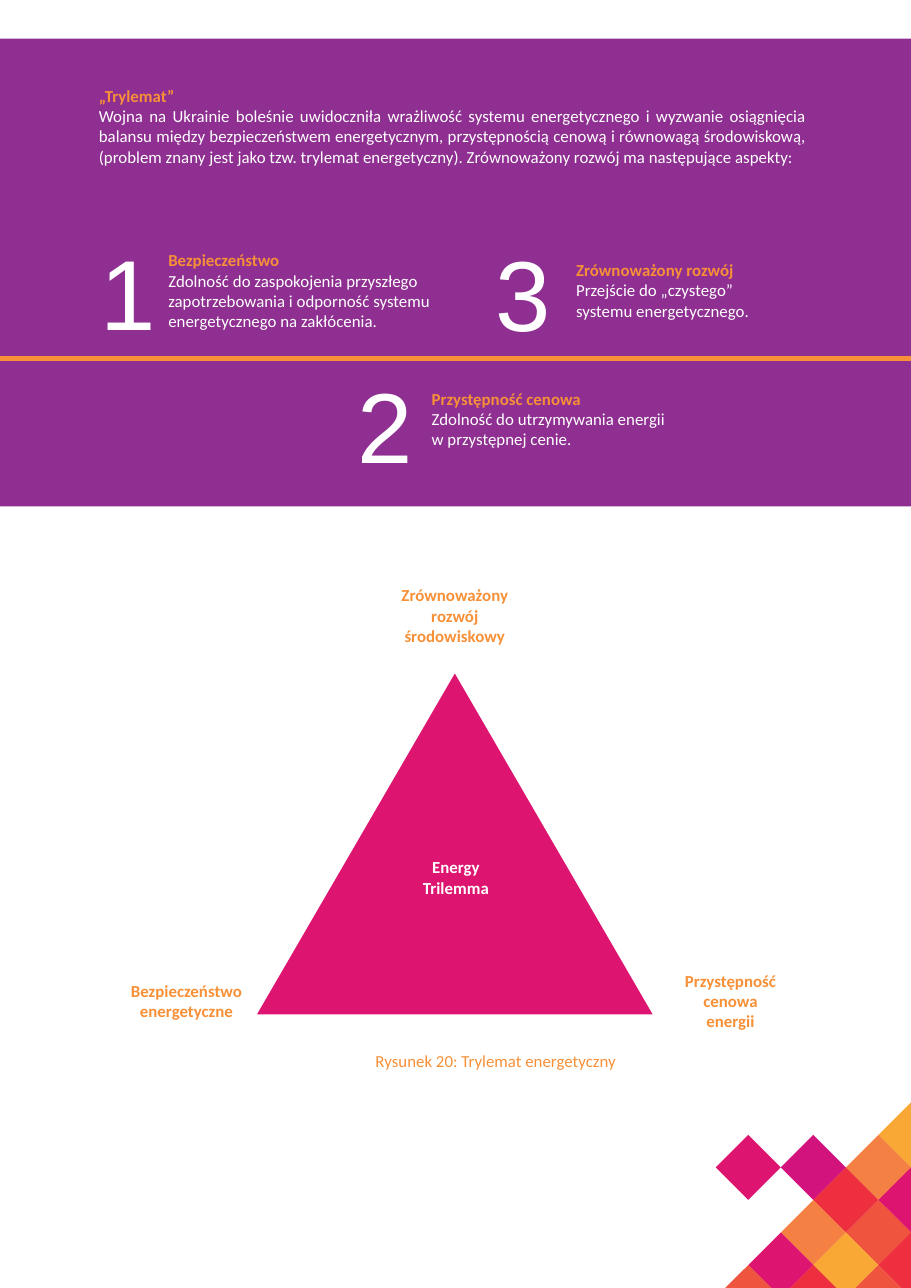
from dataclasses import dataclass

from lxml import etree
from pptx import Presentation
from pptx.dml.color import RGBColor
from pptx.enum.shapes import MSO_CONNECTOR, MSO_SHAPE
from pptx.enum.text import MSO_ANCHOR, PP_ALIGN
from pptx.oxml.ns import qn
from pptx.util import Cm, Pt

LEFT, CENTER, JUSTIFY = PP_ALIGN.LEFT, PP_ALIGN.CENTER, PP_ALIGN.JUSTIFY
TOP, MIDDLE = MSO_ANCHOR.TOP, MSO_ANCHOR.MIDDLE

WHITE = RGBColor(0xFF, 0xFF, 0xFF)
PURPLE = RGBColor(0x8E, 0x2F, 0x91)
ORANGE = RGBColor(0xF7, 0x90, 0x37)
PINK = RGBColor(0xDD, 0x14, 0x70)
MAGENTA = RGBColor(0xD3, 0x13, 0x7D)
RED = RGBColor(0xED, 0x2F, 0x40)
CORAL = RGBColor(0xEF, 0x54, 0x3F)
APRICOT = RGBColor(0xF4, 0x80, 0x43)
AMBER = RGBColor(0xF9, 0xA8, 0x35)

PAGE_WIDTH, PAGE_HEIGHT = 21.0, 29.7
DIVIDER_TOP = 8.26
TILE_HALF = 0.75
MOSAIC_TOP = 26.17

Point = tuple[float, float]


@dataclass(frozen=True)
class Box:
    """A frame in centimetres."""
    left: float
    top: float
    width: float
    height: float

    def lengths(self) -> tuple[Cm, Cm, Cm, Cm]:
        return Cm(self.left), Cm(self.top), Cm(self.width), Cm(self.height)


@dataclass(frozen=True)
class Line:
    text: str
    color: RGBColor = ORANGE
    bold: bool = False
    size: float = 11
    font: str = "Calibri"


@dataclass(frozen=True)
class Aspect:
    number: str
    number_left: float
    number_top: float
    heading: str
    description: str
    box: Box


@dataclass(frozen=True)
class Label:
    text: str
    box: Box
    color: RGBColor = ORANGE


@dataclass(frozen=True)
class Tile:
    """A mosaic diamond, counted in half diagonals from the right edge and down."""
    column: int
    row: int
    color: RGBColor


INTRO = (
    "Wojna na Ukrainie boleśnie uwidoczniła wrażliwość systemu energetycznego i wyzwanie "
    "osiągnięcia balansu między bezpieczeństwem energetycznym, przystępnością cenową i "
    "równowagą środowiskową, (problem znany jest jako tzw. trylemat energetyczny). "
    "Zrównoważony rozwój ma następujące aspekty:"
)
ASPECTS = [
    Aspect("1", 2.06, 5.21, "Bezpieczeństwo",
           "Zdolność do zaspokojenia przyszłego zapotrzebowania i odporność systemu "
           "energetycznego na zakłócenia.", Box(3.63, 5.64, 8.69, 1.75)),
    Aspect("2", 8, DIVIDER_TOP, "Przystępność cenowa",
           "Zdolność do utrzymywania energii w przystępnej cenie.",
           Box(9.7, 8.84, 6.02, 1.75)),
    Aspect("3", 11.18, 5.23, "Zrównoważony rozwój",
           "Przejście do „czystego” systemu energetycznego.",
           Box(13.03, 5.87, 4.78, 1.75)),
]
LABELS = [
    Label("Zrównoważony rozwój środowiskowy", Box(8.86, 13.16, 3.25, 2.06)),
    Label("Energy Trilemma", Box(9.09, 19.2, 2.84, 2.06), WHITE),
    Label("Bezpieczeństwo energetyczne", Box(2.74, 22.05, 3.12, 2.06)),
    Label("Przystępność cenowa energii", Box(15.42, 22.05, 2.84, 2.06)),
]
TILES = [
    Tile(0, 0, AMBER),
    Tile(1, 1, APRICOT), Tile(3, 1, MAGENTA), Tile(5, 1, PINK),
    Tile(0, 2, PINK), Tile(2, 2, RED),
    Tile(1, 3, CORAL), Tile(3, 3, APRICOT),
    Tile(0, 4, RED), Tile(2, 4, AMBER), Tile(4, 4, PINK),
    Tile(1, 5, CORAL), Tile(3, 5, RED), Tile(5, 5, CORAL),
]


def add_text(slide, box: Box, lines: list[Line], align: PP_ALIGN = LEFT,
             anchor: MSO_ANCHOR = TOP) -> None:
    frame = slide.shapes.add_textbox(*box.lengths()).text_frame
    frame.word_wrap = True
    frame.vertical_anchor = anchor
    for index, line in enumerate(lines):
        paragraph = frame.add_paragraph() if index else frame.paragraphs[0]
        paragraph.text = line.text
        paragraph.alignment = align
        paragraph.font.name = line.font
        paragraph.font.size = Pt(line.size)
        paragraph.font.bold = line.bold
        paragraph.font.color.rgb = line.color


def paint(shape, color: RGBColor) -> None:
    """Give a flat fill without outline or shadow."""
    shape.shadow.inherit = False
    shape.fill.solid()
    shape.fill.fore_color.rgb = color
    shape.line.fill.background()


def add_divider(slide) -> None:
    divider = slide.shapes.add_connector(
        MSO_CONNECTOR.STRAIGHT, 0, Cm(DIVIDER_TOP), Cm(PAGE_WIDTH), Cm(DIVIDER_TOP))
    divider.line.color.rgb = ORANGE
    divider.line.width = Pt(3)
    etree.SubElement(divider._element.spPr, qn("a:effectLst"))


def add_aspect(slide, aspect: Aspect) -> None:
    add_text(slide, Box(aspect.number_left, aspect.number_top, 1.83, 3.02),
             [Line(aspect.number, WHITE, size=65, font="Arial")])
    add_text(slide, aspect.box,
             [Line(aspect.heading, bold=True), Line(aspect.description, WHITE)])


def clip(points: list[Point], axis: int, limit: float) -> list[Point]:
    """Keep the part of a polygon whose coordinate on the axis is within the limit."""
    kept: list[Point] = []
    for start, end in zip(points, points[1:] + points[:1]):
        if start[axis] <= limit:
            kept.append(start)
        if (start[axis] - limit) * (end[axis] - limit) < 0:
            share = (limit - start[axis]) / (end[axis] - start[axis])
            kept.append((start[0] + share * (end[0] - start[0]),
                         start[1] + share * (end[1] - start[1])))
    return kept


def add_tile(slide, tile: Tile) -> None:
    x = PAGE_WIDTH - tile.column * TILE_HALF
    y = MOSAIC_TOP + tile.row * TILE_HALF
    diamond = [(x, y - TILE_HALF), (x + TILE_HALF, y), (x, y + TILE_HALF), (x - TILE_HALF, y)]
    visible = clip(clip(diamond, 0, PAGE_WIDTH), 1, PAGE_HEIGHT)
    corners = [(Cm(px), Cm(py)) for px, py in visible]
    builder = slide.shapes.build_freeform(*corners[0])
    builder.add_line_segments(corners[1:], close=True)
    paint(builder.convert_to_shape(), tile.color)


def main() -> None:
    presentation = Presentation()
    presentation.slide_width = Cm(PAGE_WIDTH)
    presentation.slide_height = Cm(PAGE_HEIGHT)
    slide = presentation.slides.add_slide(presentation.slide_layouts[6])

    band = slide.shapes.add_shape(
        MSO_SHAPE.RECTANGLE, *Box(0, 0.89, PAGE_WIDTH, 10.79).lengths())
    paint(band, PURPLE)
    triangle = slide.shapes.add_shape(
        MSO_SHAPE.ISOSCELES_TRIANGLE, *Box(5.89, 15.49, 9.19, 7.92).lengths())
    paint(triangle, PINK)
    triangle.line.color.rgb = WHITE
    triangle.line.width = Pt(1)

    add_text(slide, Box(2.03, 1.85, 16.81, 2.2),
             [Line("„Trylemat”", bold=True), Line(INTRO, WHITE)], JUSTIFY)
    add_divider(slide)
    for aspect in ASPECTS:
        add_aspect(slide, aspect)
    for tile in TILES:
        add_tile(slide, tile)
    add_text(slide, Box(3.05, 24.1, 16.76, 0.71),
             [Line("Rysunek 20: Trylemat energetyczny")], CENTER)
    for label in LABELS:
        add_text(slide, label.box, [Line(label.text, label.color, bold=True)], CENTER, MIDDLE)
    presentation.save("out.pptx")


if __name__ == "__main__":
    main()
